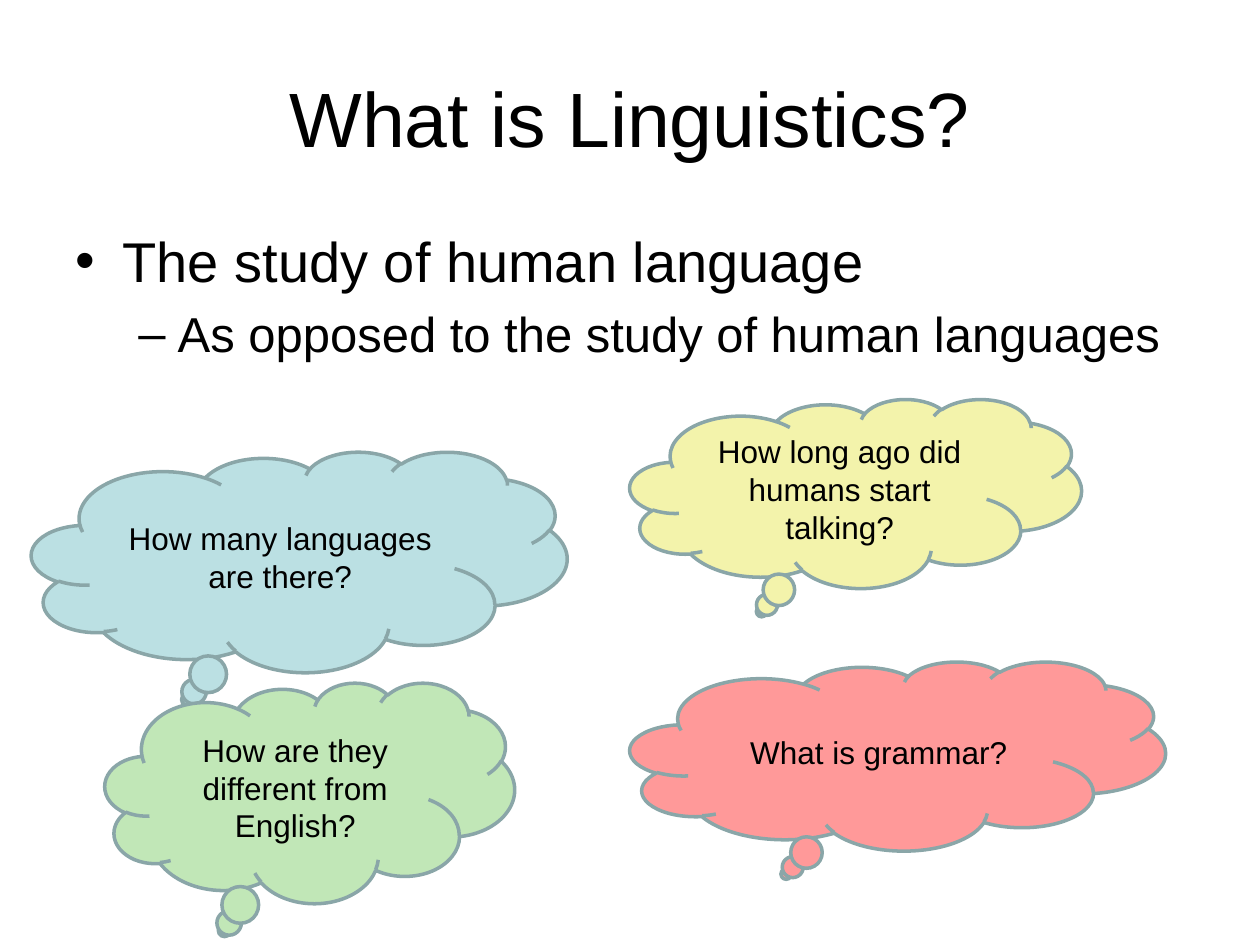
from dataclasses import dataclass

from lxml import etree
from pptx import Presentation
from pptx.dml.color import RGBColor
from pptx.enum.shapes import MSO_SHAPE
from pptx.enum.text import MSO_ANCHOR, MSO_AUTO_SIZE, PP_ALIGN
from pptx.oxml.ns import qn
from pptx.util import Pt

CLOUD = MSO_SHAPE.CLOUD_CALLOUT
MIDDLE, TOP = MSO_ANCHOR.MIDDLE, MSO_ANCHOR.TOP
CENTER, LEFT = PP_ALIGN.CENTER, PP_ALIGN.LEFT
NO_FIT = MSO_AUTO_SIZE.NONE
TITLE_ONLY = 5


@dataclass(frozen=True)
class Theme:
    font: str = "Arial"
    text: str = "000000"
    outline: str = "8AA6A8"
    blue: str = "BBE0E3"
    green: str = "C1E7B7"
    yellow: str = "F3F3AB"
    red: str = "FF9999"
    title_size: int = 44
    bullet_sizes: tuple = (32, 28)
    cloud_size: int = 18
    outline_width: int = 2


class SlideBuilder:
    """Holds the theme and the current slide."""

    # Per level: bullet character, left margin and hanging indent
    BULLETS = (("•", 27, 27), ("–", 58.5, 22.5))

    def __init__(self, slide, theme):
        self.slide = slide
        self.theme = theme

    def place(self, shape, box):
        for name, value in zip(("left", "top", "width", "height"), box):
            setattr(shape, name, Pt(value))

    def frame(self, shape, anchor):
        tf = shape.text_frame
        settings = {"word_wrap": True, "auto_size": NO_FIT, "vertical_anchor": anchor}
        for name, value in settings.items():
            setattr(tf, name, value)
        return tf

    def add_text(self, p, text, size, align):
        p.alignment = align
        r = p.add_run()
        r.text = text
        for name, value in {"name": self.theme.font, "size": Pt(size)}.items():
            setattr(r.font, name, value)
        r.font.color.rgb = RGBColor.from_string(self.theme.text)

    def title(self, text, box):
        sp = self.slide.shapes.title
        self.place(sp, box)
        tf = self.frame(sp, MIDDLE)
        self.add_text(tf.paragraphs[0], text, self.theme.title_size, CENTER)

    def bullets(self, items, box):
        sp = self.slide.shapes.add_textbox(*map(Pt, box))
        tf = self.frame(sp, TOP)
        for i, (level, text) in enumerate(items):
            p = tf.paragraphs[0] if i == 0 else tf.add_paragraph()
            size = self.theme.bullet_sizes[level]
            p.level = level
            p.space_before = Pt(size * 0.2)
            self.add_text(p, text, size, LEFT)
            char, margin, hang = self.BULLETS[level]
            pPr = p._p.get_or_add_pPr()
            pPr.set("marL", str(Pt(margin)))
            pPr.set("indent", str(-Pt(hang)))
            etree.SubElement(pPr, qn("a:buFont"), typeface=self.theme.font)
            etree.SubElement(pPr, qn("a:buChar"), char=char)

    def cloud(self, text, color, box):
        sp = self.slide.shapes.add_shape(CLOUD, *map(Pt, box))
        sp.shadow.inherit = False
        sp.fill.solid()
        sp.fill.fore_color.rgb = RGBColor.from_string(color)
        sp.line.color.rgb = RGBColor.from_string(self.theme.outline)
        sp.line.width = Pt(self.theme.outline_width)
        tf = self.frame(sp, MIDDLE)
        self.add_text(tf.paragraphs[0], text, self.theme.cloud_size, CENTER)


def main():
    prs = Presentation()
    prs.slide_width, prs.slide_height = Pt(720), Pt(540)
    theme = Theme()
    s = SlideBuilder(prs.slides.add_slide(prs.slide_layouts[TITLE_ONLY]), theme)

    # Heading and definition
    s.title("What is Linguistics?", (36, 21.6, 648, 90))
    s.bullets(
        [
            (0, "The study of human language"),
            (1, "As opposed to the study of human languages"),
        ],
        (36, 126, 648, 356.4),
    )

    # Questions in thought clouds
    for text, color, box in (
        ("How many languages are there?", theme.blue, (18, 258, 306, 126)),
        ("How are they different from English?", theme.green, (60, 390, 234, 126)),
        ("How long ago did humans start talking?", theme.yellow, (360, 228, 258, 108)),
        ("What is grammar?", theme.red, (360, 378, 306, 108)),
    ):
        s.cloud(text, color, box)

    prs.save("out.pptx")


if __name__ == "__main__":
    main()
